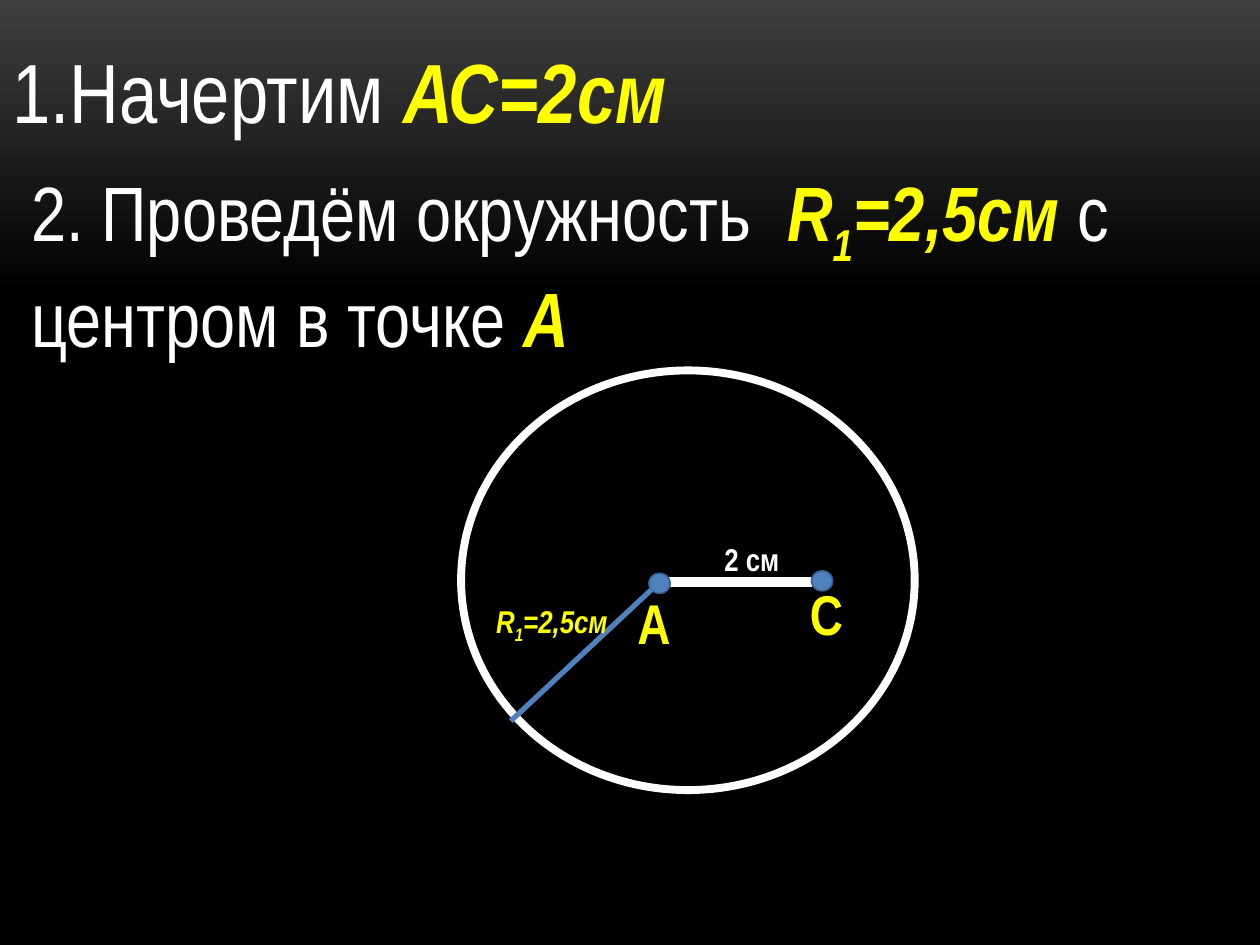
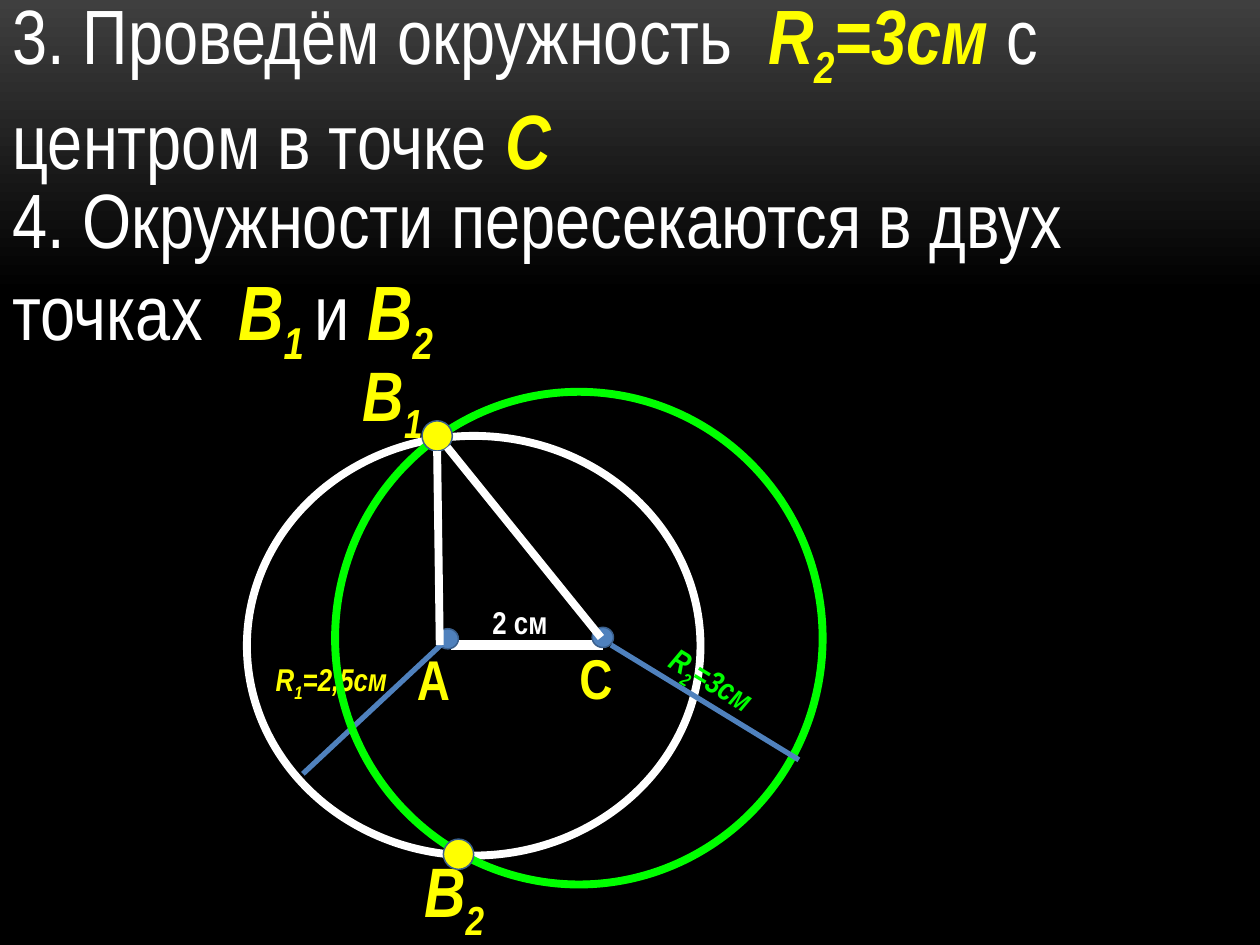
import typing

import pptx
import pptx.dml.color
import pptx.enum.shapes
import pptx.enum.text
import pptx.oxml.ns
import pptx.util
from lxml import etree

Pt = pptx.util.Pt
FONT = "Arial Narrow"
WHITE, BLACK, CHARCOAL = "FFFFFF", "000000", "3F3F3F"
YELLOW, GREEN, BLUE, NAVY = "FFFF00", "00FF00", "4F81BD", "3A5F8C"
TITLE_ONLY = 5


class Piece(typing.NamedTuple):
    """A stretch of text, possibly highlighted or lowered."""
    text: str
    key: bool = False
    low: bool = False


class Marks(typing.NamedTuple):
    """Offsets of the parts of segment AC from the first circle's box."""
    segment: tuple
    a_name: tuple
    c_name: tuple
    a_dot: tuple
    c_dot: tuple
    length: tuple
    radius: tuple
    radius_name: tuple


def rgb(value):
    """Turn a hex string into a colour."""
    return pptx.dml.color.RGBColor.from_string(value)


def indexed(letter, index, rest=""):
    """Return the pieces of a letter with a lowered index."""
    pieces = [Piece(letter, True), Piece(index, True, True)]
    return pieces + [Piece(rest, True)] if rest else pieces


def write(shape, pieces, size, colour, bold=False, italic=False, numbered=False):
    """Fill a shape with one paragraph of pieces."""
    frame = shape.text_frame
    frame.word_wrap = True
    frame.auto_size = pptx.enum.text.MSO_AUTO_SIZE.SHAPE_TO_FIT_TEXT
    frame.vertical_anchor = pptx.enum.text.MSO_ANCHOR.TOP
    paragraph = frame.paragraphs[0]
    paragraph.alignment = pptx.enum.text.PP_ALIGN.LEFT
    if numbered:
        properties = paragraph._p.get_or_add_pPr()
        properties.set("marL", str(Pt(27)))
        properties.set("indent", str(-Pt(27)))
        etree.SubElement(properties, pptx.oxml.ns.qn("a:buFontTx"))
        number = etree.SubElement(properties, pptx.oxml.ns.qn("a:buAutoNum"))
        number.set("type", "arabicPeriod")
    font = paragraph.font
    font.name, font.size, font.bold, font.italic = FONT, Pt(size), bold, italic
    font.color.rgb = rgb(colour)
    for piece in pieces:
        run = paragraph.add_run()
        run.text = piece.text
        if piece.key and not bold:
            run.font.bold = run.font.italic = True
            run.font.color.rgb = rgb(YELLOW)
        if piece.low:
            run._r.get_or_add_rPr().set("baseline", "-25000")


def add_title(slide, box, pieces, size, numbered=False):
    """Move the title placeholder to the box and write the step in it."""
    title = slide.shapes.title
    title.left, title.top, title.width, title.height = map(Pt, box)
    write(title, pieces, size, WHITE, numbered=numbered)


def add_text(slide, box, pieces, size, colour=YELLOW, bold=True, italic=False):
    """Add a text box and return it."""
    label = slide.shapes.add_textbox(*map(Pt, box))
    write(label, pieces, size, colour, bold, italic)
    return label


def add_ellipse(slide, box, line, width, fill=None):
    """Add an ellipse, hollow unless a fill is given."""
    ellipse = slide.shapes.add_shape(pptx.enum.shapes.MSO_SHAPE.OVAL, *map(Pt, box))
    ellipse.shadow.inherit = False
    if fill:
        ellipse.fill.solid()
        ellipse.fill.fore_color.rgb = rgb(fill)
    else:
        ellipse.fill.background()
    ellipse.line.color.rgb = rgb(line)
    ellipse.line.width = Pt(width)


def add_line(slide, start, end, colour, width):
    """Add a straight line between two points."""
    line = slide.shapes.add_connector(
        pptx.enum.shapes.MSO_CONNECTOR.STRAIGHT, *map(Pt, start + end))
    line.line.color.rgb = rgb(colour)
    line.line.width = Pt(width)
    etree.SubElement(line._element.spPr, pptx.oxml.ns.qn("a:effectLst"))


def draw_first_circle(slide, box, marks):
    """Draw segment AC and the circle around A, relative to the circle's box."""
    def place(offset, dx=0, dy=0):
        return box[0] + offset[0] + dx, box[1] + offset[1] + dy

    add_line(slide, place(marks.segment), place(marks.segment, 86.6), WHITE, 6)
    for letter, offset in (("А", marks.a_name), ("С", marks.c_name)):
        add_text(slide, place(offset) + (39.6, 46), [Piece(letter)], 32)
    for offset in (marks.a_dot, marks.c_dot):
        add_ellipse(slide, place(offset) + (12.2, 11.5), NAVY, 0.85, BLUE)
    add_text(slide, place(marks.length) + (57, 29), [Piece("2 см")], 18, WHITE)
    add_ellipse(slide, box, WHITE, 4.5)
    add_line(slide, place(marks.radius), place(marks.radius, -80.3, 75), BLUE, 3)
    add_text(slide, place(marks.radius_name) + (79.2, 29),
             indexed("R", "1", "=2,5см"), 18, italic=True)


def draw_second_circle(slide, box):
    """Draw the circle around C and points B, relative to the circle's box."""
    def place(x, y):
        return box[0] + x, box[1] + y

    add_ellipse(slide, box, GREEN, 4.5)
    add_line(slide, place(157.7, 144.7), place(265, 210.3), BLUE, 3)
    radius_name = add_text(slide, place(181.5, 153.4) + (79.2, 29),
                           indexed("R", "2", "=3см"), 18, GREEN, italic=True)
    radius_name.rotation = 31
    for dot in ((49.7, 16.6), (61.9, 255.6)):
        add_ellipse(slide, place(*dot) + (17.3, 17.3), NAVY, 0.85, YELLOW)
    for start, end in (((58.3, 33.9), (59.8, 144.7)), ((64.1, 31.7), (151.9, 140.4))):
        add_line(slide, place(*start), place(*end), WHITE, 4.5)
    for index, offset in (("1", (8.7, -26.6)), ("2", (43.9, 257.1))):
        add_text(slide, place(*offset) + (62.6, 55.4), indexed("В", index), 40, italic=True)


def build_first_steps(slide):
    """Build the slide with steps 1 and 2."""
    add_title(slide, (0, 18.7, 705, 65.5),
              [Piece("Начертим "), Piece("АС=2см", True)], 48, numbered=True)
    add_text(slide, (10.8, 90.7, 720, 113.8),
             [Piece("2. Проведём окружность  "), *indexed("R", "1", "=2,5см "),
              Piece("c центром в точке "), Piece("А", True)], 44, WHITE, bold=False)
    draw_first_circle(slide, (263.5, 211.7, 259.2, 239.8), Marks(
        segment=(113.8, 121), a_name=(93.6, 121), c_name=(192.2, 115.9),
        a_dot=(107.3, 115.9), c_dot=(200.2, 114.5), length=(143.3, 93.6),
        radius=(108.7, 125.3), radius_name=(13, 128.9)))


def build_last_steps(slide):
    """Build the slide with steps 3 and 4."""
    add_title(slide, (0, -10.8, 720, 113.8),
              [Piece("3. Проведём окружность  "), *indexed("R", "2", "=3см "),
               Piece("c центром в точке "), Piece("С", True)], 44)
    draw_first_circle(slide, (141.1, 249.1, 259.2, 239.8), Marks(
        segment=(116.6, 119.5), a_name=(90, 115.9), c_name=(182.9, 115.2),
        a_dot=(108.7, 110.2), c_dot=(197.3, 109.4), length=(133.2, 92.2),
        radius=(112.3, 118.1), radius_name=(9.4, 124.6)))
    add_text(slide, (0, 94.3, 720, 113.8),
             [Piece("4. Окружности пересекаются в двух точках  "),
              *indexed("В", "1 "), Piece("и "), *indexed("В", "2")],
             44, WHITE, bold=False)
    draw_second_circle(slide, (191.5, 223.9, 278.6, 281.5))


def set_background(master):
    """Give the master a gradient that fades to black."""
    fill = master.background.fill
    fill.gradient()
    fill.gradient_angle = 270
    for stop, colour, position in zip(fill.gradient_stops, (CHARCOAL, BLACK), (0, 0.31)):
        stop.color.rgb = rgb(colour)
        stop.position = position


def main():
    """Build and save the presentation."""
    deck = pptx.Presentation()
    deck.slide_width, deck.slide_height = Pt(720), Pt(540)
    set_background(deck.slide_master)
    for build in (build_first_steps, build_last_steps):
        build(deck.slides.add_slide(deck.slide_layouts[TITLE_ONLY]))
    deck.save("out.pptx")


if __name__ == "__main__":
    main()
